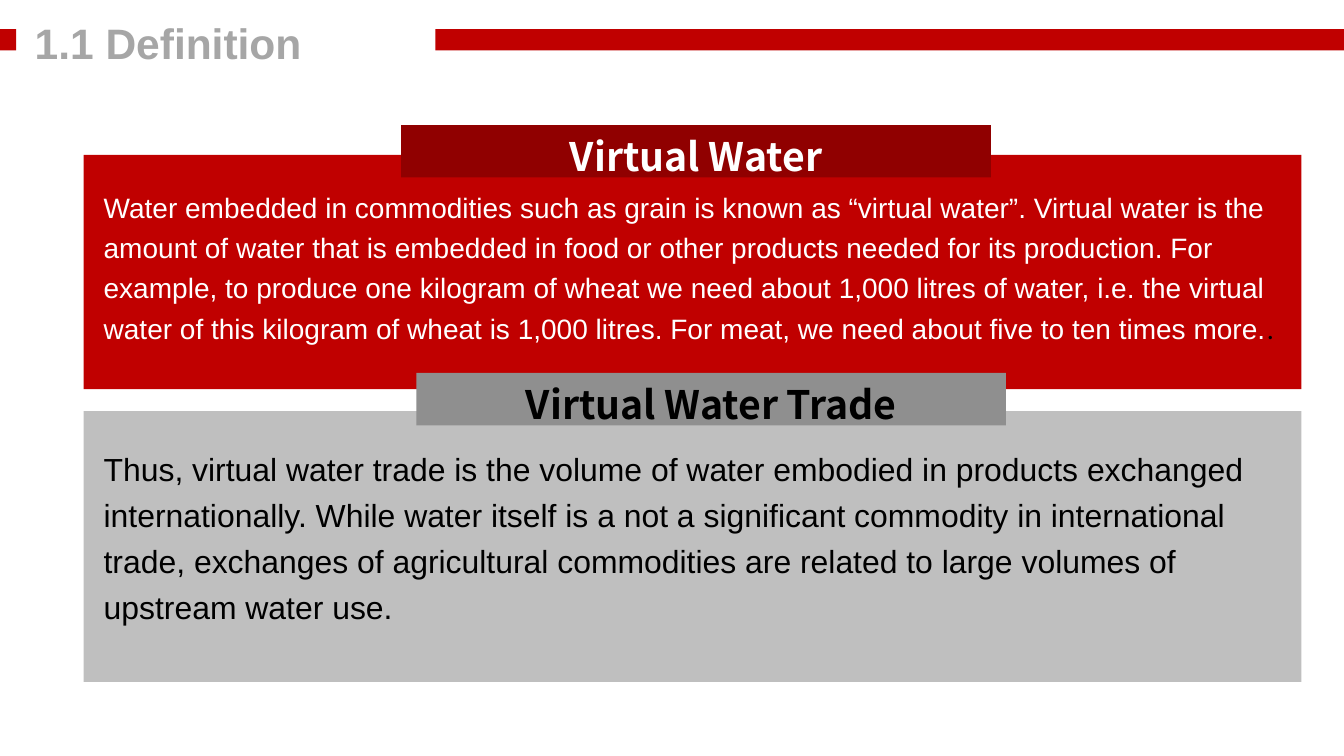
from pptx import Presentation
from pptx.dml.color import RGBColor
from pptx.enum.shapes import MSO_SHAPE
from pptx.enum.text import MSO_ANCHOR, MSO_AUTO_SIZE, PP_ALIGN
from pptx.util import Pt

RED = RGBColor(0xC0, 0x00, 0x00)
DARK_RED = RGBColor(0x90, 0x00, 0x00)
SILVER = RGBColor(0xBF, 0xBF, 0xBF)
GRAY = RGBColor(0x8F, 0x8F, 0x8F)
TITLE_GRAY = RGBColor(0xA6, 0xA6, 0xA6)
WHITE = RGBColor(0xFF, 0xFF, 0xFF)
BLACK = RGBColor(0x00, 0x00, 0x00)

BODY_FONT = "Arial"
HEADING_FONT = "Noto Sans CJK SC"

VIRTUAL_WATER = (
    "Water embedded in commodities such as grain is known as “virtual water”. "
    "Virtual water is the amount of water that is embedded in food or other products "
    "needed for its production. For example, to produce one kilogram of wheat we need "
    "about 1,000 litres of water, i.e. the virtual water of this kilogram of wheat is "
    "1,000 litres. For meat, we need about five to ten times more."
)
VIRTUAL_WATER_TRADE = (
    "Thus, virtual water trade is the volume of water embodied in products exchanged "
    "internationally. While water itself is a not a significant commodity in "
    "international trade, exchanges of agricultural commodities are related to large "
    "volumes of upstream water use."
)


def write(paragraph, text, size, color, font=BODY_FONT, bold=False,
          align=PP_ALIGN.LEFT, spacing=1.2):
    """Add a formatted run to a paragraph."""
    paragraph.alignment = align
    paragraph.line_spacing = spacing
    run = paragraph.add_run()
    run.text = text
    run.font.size = Pt(size)
    run.font.name = font
    run.font.bold = bold
    run.font.color.rgb = color


class SlideBuilder:
    """Hold the style and the current slide."""

    def __init__(self, slide):
        """Keep the slide to draw on."""
        self.slide = slide

    def title(self, text, left, top, width, height):
        """Place and format the title placeholder."""
        shape = self.slide.shapes.title
        shape.left, shape.top = Pt(left), Pt(top)
        shape.width, shape.height = Pt(width), Pt(height)
        frame = shape.text_frame
        frame.margin_left = frame.margin_right = 0
        frame.margin_top = frame.margin_bottom = 0
        frame.vertical_anchor = MSO_ANCHOR.TOP
        frame.word_wrap = False
        frame.auto_size = MSO_AUTO_SIZE.NONE
        write(frame.paragraphs[0], text, 30.4, TITLE_GRAY, bold=True, spacing=1.0)

    def block(self, left, top, width, height, color):
        """Draw a flat rectangle and return it."""
        shape = self.slide.shapes.add_shape(
            MSO_SHAPE.RECTANGLE, Pt(left), Pt(top), Pt(width), Pt(height))
        shape.shadow.inherit = False
        shape.fill.solid()
        shape.fill.fore_color.rgb = color
        shape.line.fill.background()
        return shape

    def heading(self, text, left, top, fill, color):
        """Draw a heading band with centred text."""
        frame = self.block(left, top, 421.2, 37.44, fill).text_frame
        frame.vertical_anchor = MSO_ANCHOR.MIDDLE
        frame.word_wrap = True
        write(frame.paragraphs[0], text, 28, color, font=HEADING_FONT,
              bold=True, align=PP_ALIGN.CENTER)

    def body(self, text, top, width, height, size, color):
        """Add a wrapped text box and return its paragraph."""
        box = self.slide.shapes.add_textbox(Pt(66.96), Pt(top), Pt(width), Pt(height))
        box.text_frame.word_wrap = True
        paragraph = box.text_frame.paragraphs[0]
        write(paragraph, text, size, color)
        return paragraph


def main():
    """Build and save the definition slide."""
    presentation = Presentation()
    presentation.slide_width, presentation.slide_height = Pt(960), Pt(540)
    builder = SlideBuilder(presentation.slides.add_slide(presentation.slide_layouts[5]))

    for left, width in ((311.04, 648.96), (0, 11.52)):
        builder.block(left, 20.88, width, 15.12, RED)
    builder.title("1.1 Definition", 24.8, 12.24, 199.44, 36.72)

    builder.block(59.76, 110.6, 869.76, 167.4, RED)
    builder.heading("Virtual Water", 286.56, 89.28, DARK_RED, WHITE)
    definition = builder.body(VIRTUAL_WATER, 127.44, 863.28, 127.44, 20, WHITE)
    write(definition, ".", 20, BLACK, font="Calibri")

    builder.block(59.76, 293.6, 869.76, 193.4, SILVER)
    builder.heading("Virtual Water Trade", 297.36, 266.4, GRAY, BLACK)
    builder.body(VIRTUAL_WATER_TRADE, 312.48, 856.08, 139.68, 22.8, BLACK)

    presentation.save("out.pptx")


if __name__ == "__main__":
    main()
